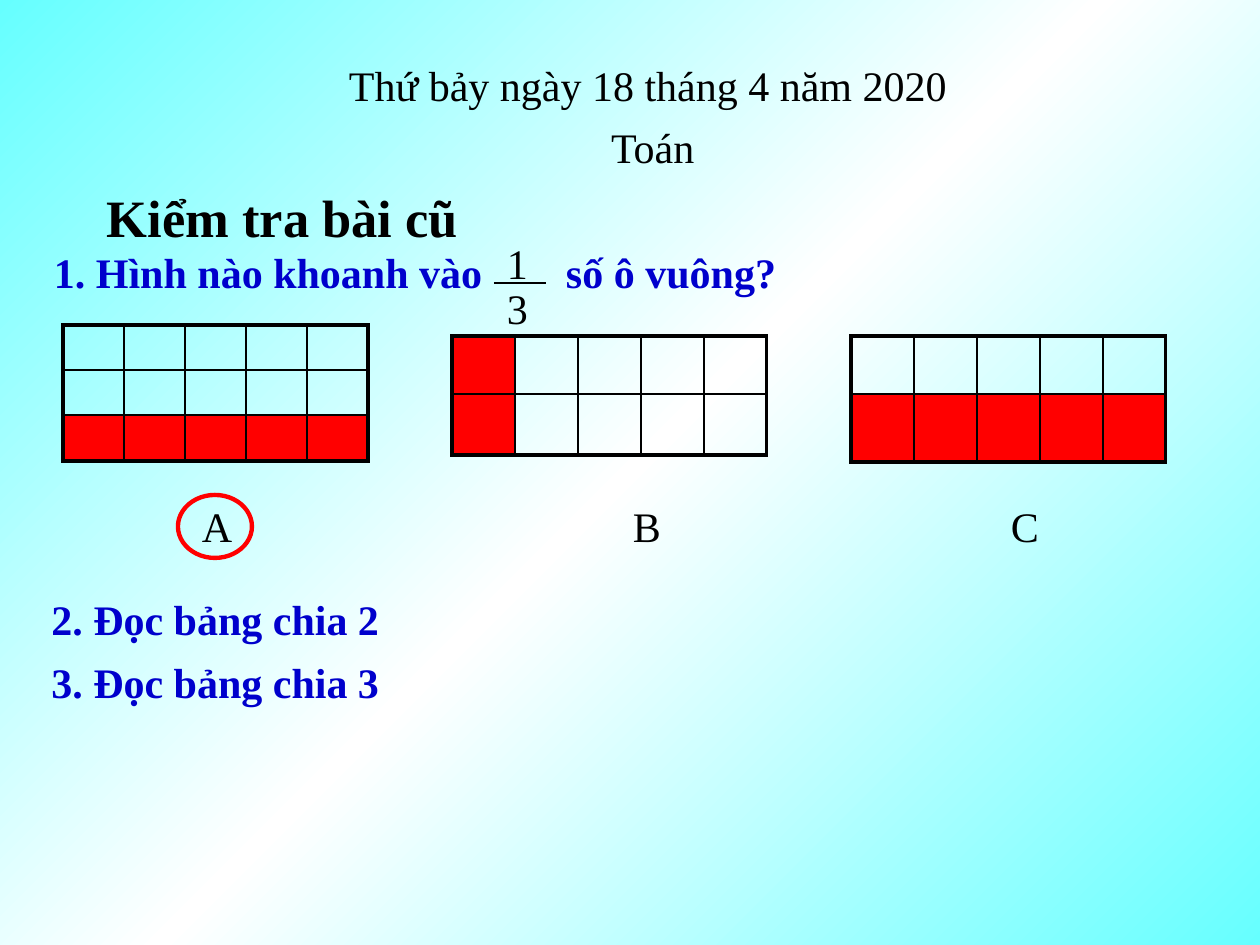
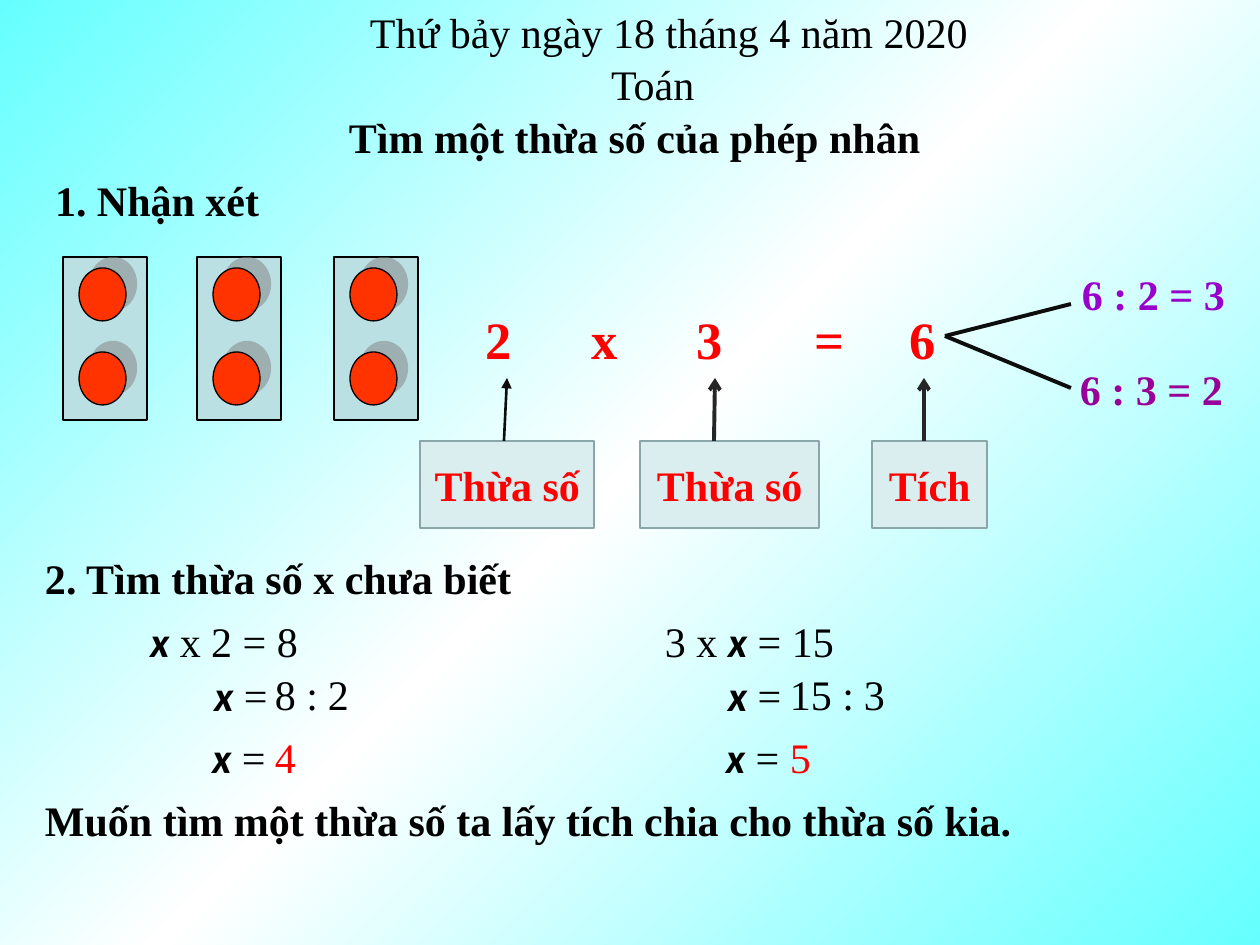
from lxml.etree import SubElement
from pptx import Presentation
from pptx.dml.color import RGBColor
from pptx.enum.shapes import MSO_CONNECTOR, MSO_SHAPE
from pptx.enum.text import MSO_ANCHOR, MSO_AUTO_SIZE, PP_ALIGN
from pptx.oxml import parse_xml
from pptx.oxml.ns import nsdecls, qn
from pptx.util import Inches, Pt

PX = 7257  # EMU per pixel, 126 pixels to the inch
INSET = 13
COLORS = {
    "black": "000000", "cyan": "66FFFF", "white": "FFFFFF", "question": "0000CC",
    "red": "FF0000", "card": "BBE0E3", "dot": "FF3300", "shadow": "808080",
    "label": "DAEDEF", "label_line": "8AA6A8", "branch": "0D0D0D", "arrow": "262626",
    "violet": "9900CC", "purple": "990099",
}
RGB = {name: RGBColor.from_string(value) for name, value in COLORS.items()}
DATE = "Thứ bảy ngày 18 tháng 4 năm 2020"
SUBJECT = "Toán"


def write_text(slide, text, box, shape=None, size=24, color="black", bold=False,
               align=PP_ALIGN.LEFT, anchor=MSO_ANCHOR.TOP, wrap=True,
               left_inset=INSET, tabs=()):
    """Write one paragraph into shape, or a new text box; *x* marks a variable."""
    left, top, width, height = [value * PX for value in box]
    if shape is None:
        shape = slide.shapes.add_textbox(left, top, width, height)
    shape.left, shape.top, shape.width, shape.height = left, top, width, height
    frame = shape.text_frame
    frame.auto_size = MSO_AUTO_SIZE.NONE
    frame.word_wrap = wrap
    frame.vertical_anchor = anchor
    frame.margin_left = left_inset * PX
    paragraph = frame.paragraphs[0]
    paragraph.alignment = align
    if tabs:
        tab_list = SubElement(paragraph._p.get_or_add_pPr(), qn("a:tabLst"))
        for position in tabs:
            SubElement(tab_list, qn("a:tab"), pos=str(position * PX), algn="l")
    for index, part in enumerate(text.split("*")):
        if not part:
            continue
        is_variable = index % 2 == 1
        run = paragraph.add_run()
        run.text = part
        run.font.name = "Calibri" if is_variable else "Times New Roman"
        run.font.size = Pt(size)
        run.font.bold = bold or is_variable
        run.font.italic = is_variable
        run.font.color.rgb = RGB[color]


def add_line(slide, start, end, color, width, arrowhead=None):
    points = [value * PX for value in (*start, *end)]
    line = slide.shapes.add_connector(MSO_CONNECTOR.STRAIGHT, *points)
    line.line.color.rgb = RGB[color]
    line.line.width = Pt(width)
    if arrowhead:
        SubElement(line.line._get_or_add_ln(), qn("a:tailEnd"), type=arrowhead)
    SubElement(line._element.spPr, qn("a:effectLst"))


presentation = Presentation()
presentation.slide_width, presentation.slide_height = Inches(10), Inches(7.5)
title_only = presentation.slide_layouts[5]

# Shared diagonal background
master = presentation.slide_master
background = master.background.fill
background.gradient()
background.gradient_angle = 315
stops = master._element.find(".//" + qn("a:gsLst"))
for stop in list(stops):
    stops.remove(stop)
for percent, color in ((0, "cyan"), (50, "white"), (100, "cyan")):
    stop = SubElement(stops, qn("a:gs"), pos=str(percent * 1000))
    SubElement(stop, qn("a:srgbClr"), val=COLORS[color])

# Slide 1: revision questions
slide = presentation.slides.add_slide(title_only)
write_text(slide, "1. Hình nào khoanh vào\tsố ô vuông?", (21, 248, 788, 47),
           shape=slide.shapes.title, color="question", bold=True,
           anchor=MSO_ANCHOR.MIDDLE, left_inset=33, tabs=[512])
write_text(slide, "Kiểm tra bài cũ", (94, 179, 381, 77), size=30, bold=True, wrap=False)
write_text(slide, SUBJECT, (598, 115, 110, 63), wrap=False)
write_text(slide, DATE, (336, 53, 629, 63), wrap=False)

# Each grid: left, top, column width, row heights, red cells as (row, column)
grids = [
    (63, 325, 61, [45, 45, 46], [(2, column) for column in range(5)]),
    (452, 336, 63, [58, 61], [(0, 0), (1, 0)]),
    (851, 336, 63, [58, 68], [(1, column) for column in range(5)]),
]
for left, top, column_width, row_heights, red_cells in grids:
    row_count = len(row_heights)
    frame = slide.shapes.add_table(row_count, 5, left * PX, top * PX,
                                   5 * column_width * PX, sum(row_heights) * PX)
    table = frame.table
    table.first_row = table.horz_banding = False
    for column in table.columns:
        column.width = column_width * PX
    for row, row_height in enumerate(row_heights):
        table.rows[row].height = row_height * PX
        for column in range(5):
            cell = table.cell(row, column)
            cell.margin_top = cell.margin_bottom = 0
            outer_edges = {"lnL": column == 0, "lnR": column == 4,
                           "lnT": row == 0, "lnB": row == row_count - 1}
            for edge, is_outer in outer_edges.items():
                border = SubElement(cell._tc.get_or_add_tcPr(), qn("a:" + edge),
                                    w=str(Pt(2.25 if is_outer else 1)))
                solid = SubElement(border, qn("a:solidFill"))
                SubElement(solid, qn("a:srgbClr"), val=COLORS["black"])
            if (row, column) in red_cells:
                cell.fill.solid()
                cell.fill.fore_color.rgb = RGB["red"]
            else:
                cell.fill.background()

# One third
write_text(slide, "1", (494, 231, 63, 60))
add_line(slide, (494, 283), (546, 283), "black", 0.75)
write_text(slide, "3", (494, 276, 53, 60))

for letter, left in (("A", 189), ("B", 620), ("C", 998)):
    write_text(slide, letter, (left, 494, 55, 63))
answer_ring = slide.shapes.add_shape(MSO_SHAPE.OVAL, 178 * PX, 495 * PX, 74 * PX, 63 * PX)
answer_ring.shadow.inherit = False
answer_ring.fill.background()
answer_ring.line.color.rgb = RGB["red"]
answer_ring.line.width = Pt(2.5)

for question, top in (("2. Đọc bảng chia 2", 595), ("3. Đọc bảng chia 3", 658)):
    write_text(slide, question, (21, top, 388, 47), color="question", bold=True,
               align=PP_ALIGN.CENTER, anchor=MSO_ANCHOR.MIDDLE)

# Slide 2: finding a factor
slide = presentation.slides.add_slide(title_only)
write_text(slide, "Tìm một thừa số của phép nhân", (336, 105, 602, 63),
           shape=slide.shapes.title, bold=True, wrap=False)
write_text(slide, SUBJECT, (598, 52, 110, 63), wrap=False)
write_text(slide, DATE, (357, 0, 629, 63), wrap=False)

for text, left, top, width in (
    ("1. Nhận xét", 42, 168, 232),
    ("2. Tìm thừa số x chưa biết", 32, 546, 496),
    ("Muốn tìm một thừa số ta lấy tích chia cho thừa số kia.", 32, 788, 1002),
):
    write_text(slide, text, (left, top, width, 63), bold=True, wrap=False)

# Three cards of two dots
for card_left in (63, 197, 334):
    parts = [(MSO_SHAPE.RECTANGLE, card_left, 257, 84, 163, "card")]
    parts += [(MSO_SHAPE.OVAL, card_left + 16, top, 47, 53, "dot") for top in (268, 352)]
    for kind, left, top, width, height, color in parts:
        shape = slide.shapes.add_shape(kind, left * PX, top * PX, width * PX, height * PX)
        shape.shadow.inherit = False
        shape.fill.solid()
        shape.fill.fore_color.rgb = RGB[color]
        shape.line.color.rgb = RGB["black"]
        shape.line.width = Pt(0.75)
        if color == "dot":
            shape._element.spPr.find(qn("a:effectLst")).append(parse_xml(
                f'<a:outerShdw {nsdecls("a")} dist="{Pt(8.5)}" dir="18900000" '
                f'algn="ctr" rotWithShape="0"><a:srgbClr val="{COLORS["shadow"]}">'
                '<a:alpha val="50000"/></a:srgbClr></a:outerShdw>'))

# Multiplication with its named parts
write_text(slide, "2\tx\t3\t=\t6", (472, 301, 493, 77), size=30, color="red",
           bold=True, left_inset=14, tabs=[106, 211, 329, 424])
for name, left, width, arrow_start, arrow_end, color, line_width, arrowhead in (
    ("Thừa số", 420, 174, 504, 507, "branch", 1.5, "triangle"),
    ("Thừa só", 640, 179, 714, 715, "arrow", 2.25, "arrow"),
    ("Tích", 872, 115, 924, 924, "arrow", 2.25, "arrow"),
):
    box = (left, 441, width, 87)
    label = slide.shapes.add_shape(MSO_SHAPE.RECTANGLE, *[value * PX for value in box])
    label.shadow.inherit = False
    label.fill.solid()
    label.fill.fore_color.rgb = RGB["label"]
    label.line.color.rgb = RGB["label_line"]
    label.line.width = Pt(1)
    write_text(slide, name, box, shape=label, color="red", bold=True,
               align=PP_ALIGN.CENTER, anchor=MSO_ANCHOR.MIDDLE)
    add_line(slide, (arrow_start, 441), (arrow_end, 378), color, line_width, arrowhead)

for division, left, top, color, branch_end in (
    ("6 : 2 = 3", 1069, 262, "violet", 304),
    ("6 : 3 = 2", 1067, 357, "purple", 388),
):
    write_text(slide, division, (left, top, 170, 63), color=color, bold=True, wrap=False)
    add_line(slide, (945, 336), (1071, branch_end), "branch", 2.25)

# Two worked examples
for equation, equation_left, unknown_left, dividend, value_left, divisor, divisor_left, result in (
    ("*x* x 2 = 8", 137, 189, "8 :", 262, "2", 315, "4"),
    ("3 x *x* = 15", 652, 703, "15 :", 777, "3", 851, "5"),
):
    write_text(slide, equation, (equation_left, 609, 198, 63))
    write_text(slide, "*x* =", (unknown_left + 12, 663, 95, 63))
    write_text(slide, "*x* =", (unknown_left + 10, 725, 95, 63))
    write_text(slide, dividend, (value_left, 662, 105, 63))
    write_text(slide, divisor, (divisor_left, 662, 50, 63))
    write_text(slide, result, (value_left, 725, 63, 63), color="red")

presentation.save("out.pptx")
